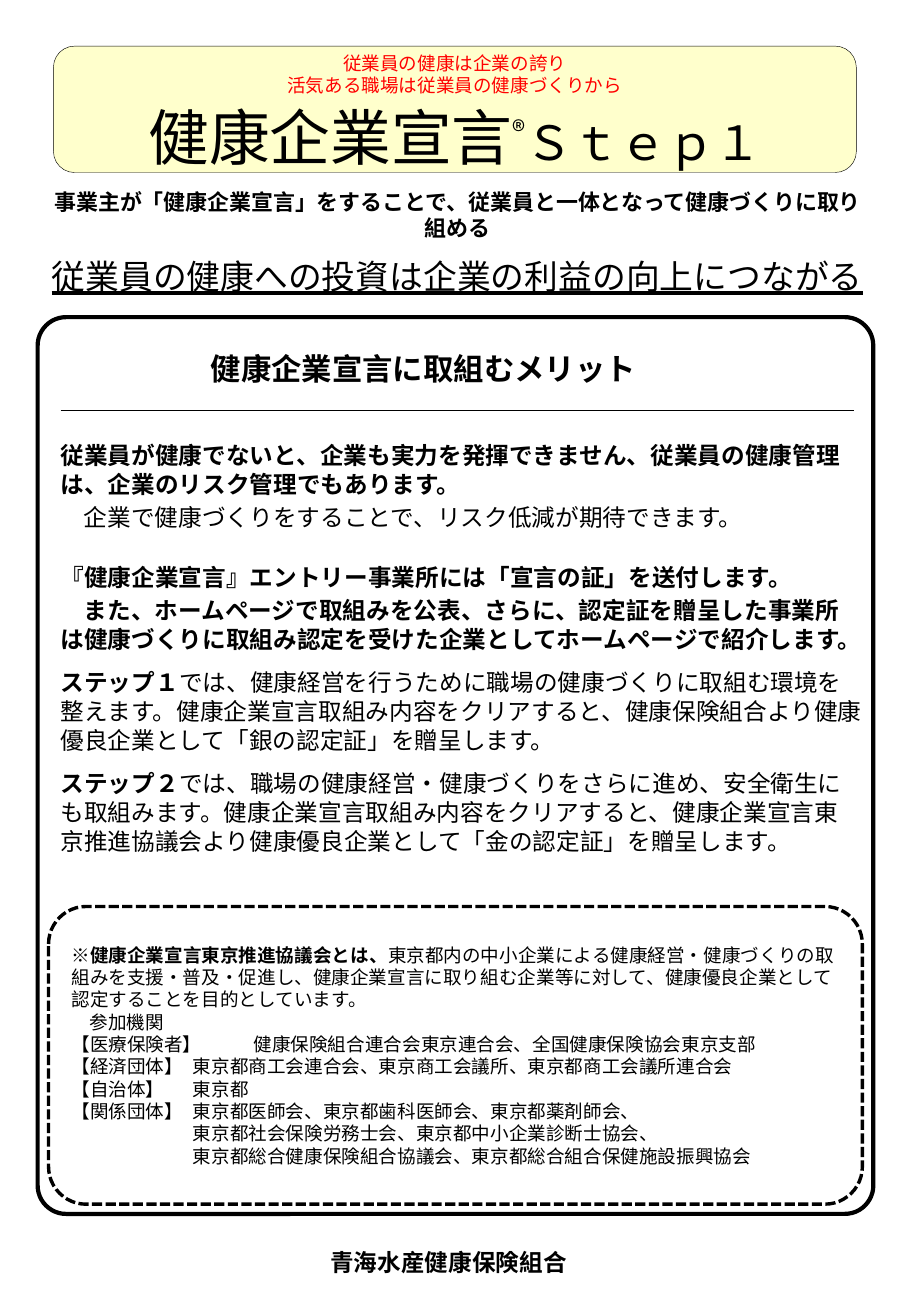
import pptx
import pptx.dml.color
import pptx.enum.dml
import pptx.enum.shapes
import pptx.enum.text
import pptx.oxml.ns
import pptx.util
from pptx.util import Inches
import lxml.etree

SHAPE = pptx.enum.shapes.MSO_SHAPE
ALIGN = pptx.enum.text.PP_ALIGN
ANCHOR = pptx.enum.text.MSO_ANCHOR
NOTO = "Noto Sans CJK JP"
BLACK, WHITE = "000000", "FFFFFF"


def color(code):
    return pptx.dml.color.RGBColor.from_string(code)


def sub(parent, tag, **attrs):
    return lxml.etree.SubElement(parent, pptx.oxml.ns.qn(tag), **attrs)


def add_run(para, text, size, font=NOTO, bold=False, ink=BLACK, line=False, base=0):
    run = para.add_run()
    run.text = text
    run.font.size = pptx.util.Pt(size)
    run.font.bold = bold
    run.font.underline = line
    run.font.color.rgb = color(ink)
    run.font.name = font
    props = run.font._element
    sub(props, "a:ea", typeface=font)
    if base:
        props.set("baseline", str(base * 1000))


def set_frame(shape, anchor=ANCHOR.MIDDLE, inset=True):
    frame = shape.text_frame
    frame.word_wrap = True
    frame.auto_size = pptx.enum.text.MSO_AUTO_SIZE.NONE
    frame.vertical_anchor = anchor
    if not inset:
        frame.margin_left = frame.margin_right = 0
        frame.margin_top = frame.margin_bottom = 0
    return frame


def add_para(frame, align=ALIGN.LEFT, pitch=None, before=0, indent=0, left=0, tabs=()):
    para = frame.paragraphs[0]
    if para.runs:
        para = frame.add_paragraph()
    props = para._p.get_or_add_pPr()
    props.set("marL", str(Inches(left)))
    props.set("indent", str(Inches(indent)))
    if tabs:
        stops = sub(props, "a:tabLst")
        for stop in tabs:
            sub(stops, "a:tab", pos=str(Inches(stop)), algn="l")
    para.alignment = align
    para.space_before = pptx.util.Pt(before)
    if pitch:
        para.line_spacing = pptx.util.Pt(pitch)
    return para


def add_box(slide, kind, place, fill=WHITE, line=None, width=1, adj=None):
    box = slide.shapes.add_shape(kind, *map(Inches, place))
    box.shadow.inherit = False
    box.fill.solid()
    box.fill.fore_color.rgb = color(fill)
    if line:
        box.line.color.rgb = color(line)
        box.line.width = pptx.util.Pt(width)
    else:
        box.line.fill.background()
    if adj:
        box.adjustments[0] = adj
    return box


def add_text(slide, place):
    return slide.shapes.add_textbox(*map(Inches, place))


def add_rule(slide, left, right, top):
    rule = slide.shapes.add_connector(
        pptx.enum.shapes.MSO_CONNECTOR.STRAIGHT,
        Inches(left), Inches(top), Inches(right), Inches(top))
    rule.line.color.rgb = color(BLACK)
    rule.line.width = pptx.util.Pt(0.75)
    sub(rule._element.spPr, "a:effectLst")


def add_lead(slide):
    box = add_box(slide, SHAPE.RECTANGLE, (0.29, 1.56, 6.95, 0.87), line=WHITE)
    frame = set_frame(box)
    add_run(add_para(frame, ALIGN.CENTER, 15.5),
            "事業主が「健康企業宣言」をすることで、従業員と一体となって健康づくりに取り組める",
            13, "Calibri", True)
    add_run(add_para(frame, ALIGN.CENTER, 24, 9),
            "従業員の健康への投資は企業の利益の向上につながる", 20, "Calibri", line=True)


def add_merits(slide):
    add_box(slide, SHAPE.ROUNDED_RECTANGLE, (0.31, 2.61, 6.88, 7.38),
            line=BLACK, width=2.5, adj=0.034)
    head = set_frame(add_text(slide, (0.14, 2.76, 6.69, 0.54)))
    add_run(add_para(head, ALIGN.CENTER), "健康企業宣言に取組むメリット", 18, bold=True)
    add_rule(slide, 0.5, 7.03, 3.38)
    body = set_frame(add_text(slide, (0.5, 3.62, 6.6, 3.6)), ANCHOR.TOP, False)
    items = [
        (0, 0, "従業員が健康でないと、企業も実力を発揮できません、従業員の健康管理は、企業のリスク管理でもあります。", ""),
        (2.4, 0.19, "", "企業で健康づくりをすることで、リスク低減が期待できます。"),
        (18.6, 0, "『健康企業宣言』エントリー事業所には「宣言の証」を送付します。", ""),
        (2.4, 0.19, "また、ホームページで取組みを公表、さらに、認定証を贈呈した事業所は健康づくりに取組み認定を受けた企業としてホームページで紹介します。", ""),
        (8, 0, "ステップ１", "では、健康経営を行うために職場の健康づくりに取組む環境を整えます。健康企業宣言取組み内容をクリアすると、健康保険組合より健康優良企業として「銀の認定証」を贈呈します。"),
        (8, 0, "ステップ２", "では、職場の健康経営・健康づくりをさらに進め、安全衛生にも取組みます。健康企業宣言取組み内容をクリアすると、健康企業宣言東京推進協議会より健康優良企業として「金の認定証」を贈呈します。"),
    ]
    for before, indent, strong, plain in items:
        para = add_para(body, pitch=17.2, before=before, indent=indent)
        for text, bold in ((strong, True), (plain, False)):
            if text:
                add_run(para, text, 14, bold=bold)


def add_banner(slide):
    place = (0.44, 0.38, 6.61, 1.04)
    panel = add_box(slide, SHAPE.ROUNDED_RECTANGLE, place, "FFFFCC", BLACK, 0.25)
    title = slide.shapes.title
    title.left, title.top, title.width, title.height = map(Inches, place)
    panel._element.addnext(title._element)
    para = add_para(set_frame(title, ANCHOR.BOTTOM, False), ALIGN.CENTER)
    add_run(para, "健康企業宣言", 36)
    add_run(para, "®", 28, base=40)
    add_run(para, "Ｓｔｅｐ１", 28)
    motto = set_frame(add_text(slide, (1.62, 0.38, 4.25, 0.47)), ANCHOR.TOP)
    for text in ("従業員の健康は企業の誇り", "活気ある職場は従業員の健康づくりから"):
        add_run(add_para(motto, ALIGN.CENTER, 13.2), text, 11, ink="FF0000")


def add_footer(slide):
    box = add_box(slide, SHAPE.RECTANGLE, (2.56, 10.22, 2.27, 0.33))
    para = add_para(set_frame(box, inset=False), ALIGN.CENTER)
    add_run(para, "青海水産健康保険組合", 14, bold=True)


def add_council(slide):
    box = add_box(slide, SHAPE.ROUNDED_RECTANGLE, (0.4, 7.46, 6.7, 2.45),
                  line=BLACK, width=2, adj=0.126)
    box.line.dash_style = pptx.enum.dml.MSO_LINE.SQUARE_DOT
    frame = set_frame(box)
    para = add_para(frame, pitch=13.2)
    add_run(para, "※", 11, "Arial")
    add_run(para, "健康企業宣言東京推進協議会とは、", 11, "Arial", True)
    add_run(para, "東京都内の中小企業による健康経営・健康づくりの取組みを支援・普及・促進し、健康企業宣言に取り組む企業等に対して、健康優良企業として認定することを目的としています。", 11, "Arial")
    rows = [
        (0.15, "参加機関"),
        (0, "【医療保険者】\t健康保険組合連合会東京連合会、全国健康保険協会東京支部"),
        (0, "【経済団体】\t東京都商工会連合会、東京商工会議所、東京都商工会議所連合会"),
        (0, "【自治体】\t東京都"),
        (0, "【関係団体】\t東京都医師会、東京都歯科医師会、東京都薬剤師会、"),
        (1, "東京都社会保険労務士会、東京都中小企業診断士協会、"),
        (1, "東京都総合健康保険組合協議会、東京都総合組合保健施設振興協会"),
    ]
    for left, text in rows:
        add_run(add_para(frame, pitch=13.2, left=left, tabs=(1, 2)), text, 11, "Arial")


def main():
    deck = pptx.Presentation()
    deck.slide_width, deck.slide_height = Inches(7.5), Inches(10.83)
    slide = deck.slides.add_slide(deck.slide_layouts[5])
    add_lead(slide)
    add_merits(slide)
    add_banner(slide)
    add_footer(slide)
    add_council(slide)
    deck.save("out.pptx")


if __name__ == "__main__":
    main()
